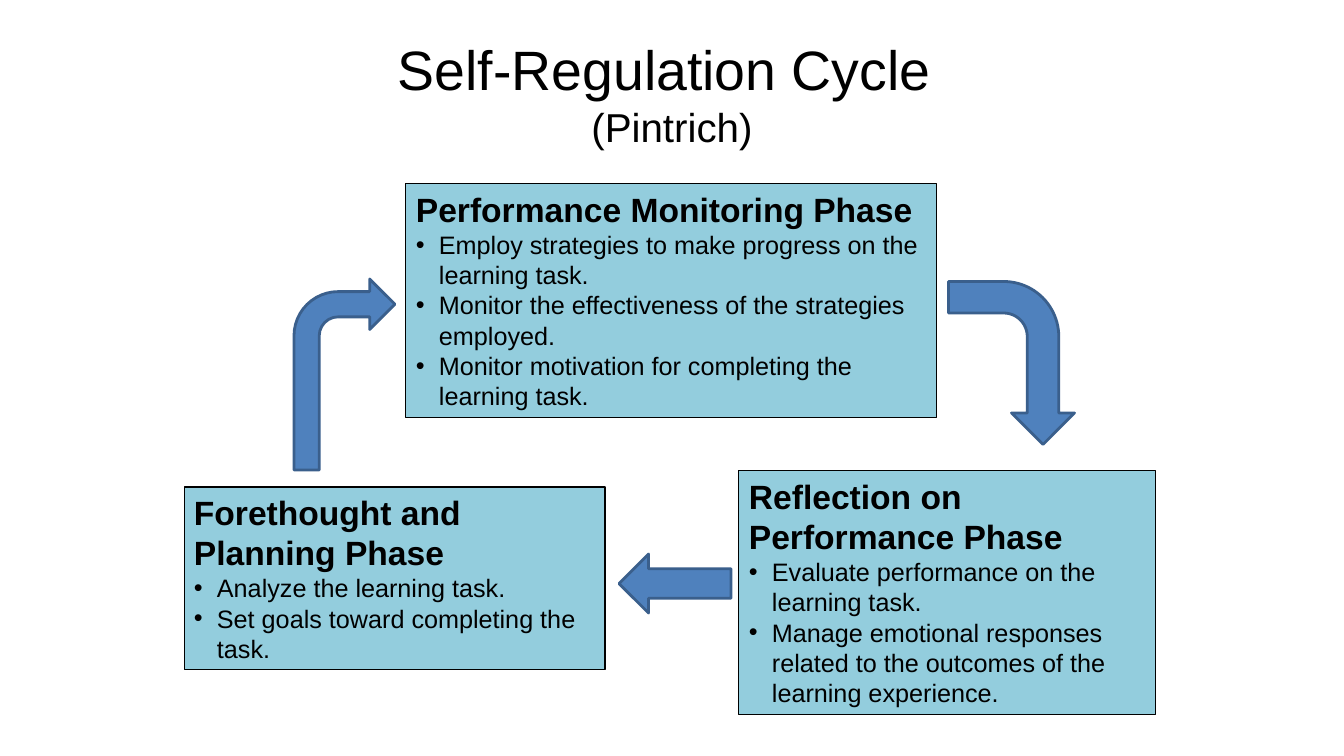
from pptx import Presentation
from pptx.dml.color import RGBColor
from pptx.enum.shapes import MSO_SHAPE
from pptx.enum.text import MSO_ANCHOR, MSO_AUTO_SIZE, PP_ALIGN
from pptx.util import Emu, Pt
from lxml.etree import SubElement
from pptx.oxml.ns import qn

SLIDE_WIDTH, SLIDE_HEIGHT = 1344, 756
SCALE = 12192000 / SLIDE_WIDTH
FONT = "Arial"
BLACK, PHASE_FILL = "000000", "93CDDD"
ARROW_FILL, ARROW_LINE = "4F81BD", "3A5F8C"
BULLET_INDENT = 23

TITLE_BOX = (67, 30, 1210, 126)
TITLE_LINES = [("Self-Regulation Cycle ", 39.6), ("(Pintrich)", 28.8)]

PHASES = [
    ("Performance Monitoring Phase", (406, 184, 531, 234), [
        "Employ strategies to make progress on the learning task.",
        "Monitor the effectiveness of the strategies employed.",
        "Monitor motivation for completing the learning task.",
    ]),
    ("Reflection on Performance Phase", (739, 471, 417, 244), [
        "Evaluate performance on the learning task.",
        "Manage emotional responses related to the outcomes of the learning experience.",
    ]),
    ("Forethought and Planning Phase", (184, 487, 421, 183), [
        "Analyze the learning task.",
        "Set goals toward completing the task.",
    ]),
]

ARROWS = [
    (MSO_SHAPE.RIGHT_ARROW, (619, 554, 112, 59), 180),
    (MSO_SHAPE.BENT_ARROW, (930, 300, 163, 126), 90),
    (MSO_SHAPE.BENT_ARROW, (294, 279, 101, 191), 0),
]


def px(length):
    """Turn px into EMU."""
    return Emu(round(length * SCALE))


def color(value):
    """Turn a hex string into a colour."""
    return RGBColor.from_string(value)


def style(run, size, bold=False):
    """Set the font of a run."""
    run.font.name = FONT
    run.font.size = Pt(size)
    run.font.bold = bold
    run.font.color.rgb = color(BLACK)


def add_block(slide, preset, box, fill, line, line_width):
    """Add a filled and outlined shape without a shadow."""
    block = slide.shapes.add_shape(preset, *map(px, box))
    block.shadow.inherit = False
    block.fill.solid()
    block.fill.fore_color.rgb = color(fill)
    block.line.color.rgb = color(line)
    block.line.width = Pt(line_width)
    return block


def add_bullet(paragraph):
    """Give a paragraph a hanging bullet."""
    properties = paragraph._p.get_or_add_pPr()
    properties.set("marL", str(px(BULLET_INDENT)))
    properties.set("indent", str(-px(BULLET_INDENT)))
    SubElement(properties, qn("a:buFont"), typeface=FONT)
    SubElement(properties, qn("a:buChar"), char="•")


def fill_title(title):
    """Place the title and write its two lines."""
    title.left, title.top, title.width, title.height = map(px, TITLE_BOX)
    frame = title.text_frame
    frame.auto_size = MSO_AUTO_SIZE.NONE
    frame.vertical_anchor = MSO_ANCHOR.MIDDLE
    heading = frame.paragraphs[0]
    heading.alignment = PP_ALIGN.CENTER
    heading.text = "\v".join(text for text, size in TITLE_LINES)
    for run, (text, size) in zip(heading.runs, TITLE_LINES):
        style(run, size)


def add_phase(slide, name, box, steps):
    """Add a phase box with its heading and bulleted steps."""
    phase = add_block(slide, MSO_SHAPE.RECTANGLE, box, PHASE_FILL, BLACK, 0.75)
    frame = phase.text_frame
    frame.word_wrap = True
    frame.auto_size = MSO_AUTO_SIZE.SHAPE_TO_FIT_TEXT
    frame.vertical_anchor = MSO_ANCHOR.TOP
    frame.text = "\n".join([name, *steps])
    for position, paragraph in enumerate(frame.paragraphs):
        paragraph.alignment = PP_ALIGN.LEFT
        is_heading = position == 0
        style(paragraph.runs[0], 24 if is_heading else 18, is_heading)
        if not is_heading:
            add_bullet(paragraph)


def main():
    """Build the slide and save it."""
    deck = Presentation()
    deck.slide_width, deck.slide_height = px(SLIDE_WIDTH), px(SLIDE_HEIGHT)
    slide = deck.slides.add_slide(deck.slide_layouts[5])
    fill_title(slide.shapes.title)
    for name, box, steps in PHASES:
        add_phase(slide, name, box, steps)
    for preset, box, rotation in ARROWS:
        arrow = add_block(slide, preset, box, ARROW_FILL, ARROW_LINE, 2)
        arrow.rotation = rotation
    deck.save("out.pptx")


if __name__ == "__main__":
    main()
